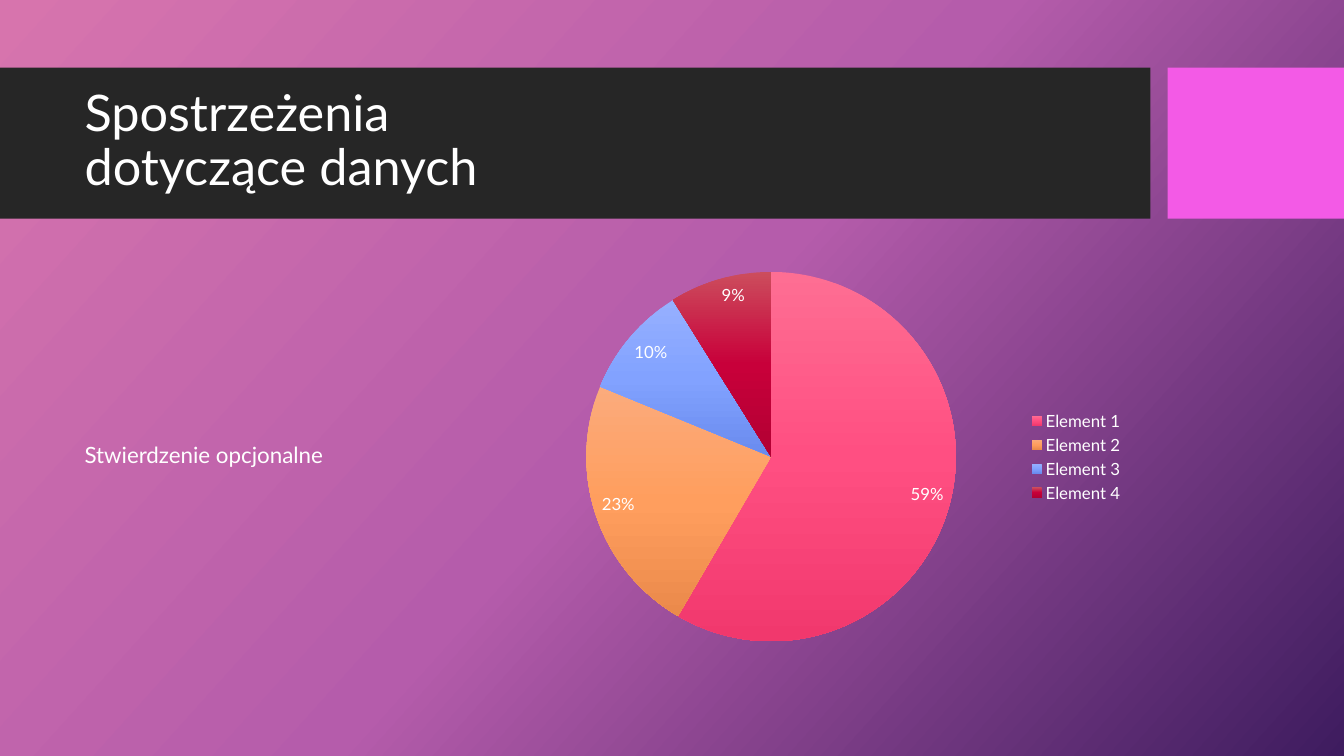
from copy import deepcopy

from pptx import Presentation
from pptx.chart.data import CategoryChartData
from pptx.dml.color import RGBColor
from pptx.enum import chart as charts, shapes, text
from pptx.util import Inches, Pt

FONT = "Lato"
WHITE = "FFFFFF"
MARGIN = 0.74
BODY_TOP, BODY_HEIGHT = 2.56, 3.94
SLICES = [
    ("Element 1", 59, ("FE6E93", "FF4F82", "F1386D")),
    ("Element 2", 23, ("FBAB7C", "FF9E5E", "EB8A4B")),
    ("Element 3", 10, ("96B0FF", "82A2FF", "698BEE")),
    ("Element 4", 9, ("CC4D5D", "C8003A", "B20033")),
]


def color(value):
    return RGBColor.from_string(value)


def style_font(font, size):
    font.name, font.size = FONT, Pt(size)
    font.color.rgb = color(WHITE)


def fill_gradient(fill, colors, clockwise):
    """Blend three evenly spaced colours at a clockwise angle in degrees."""
    fill.gradient()
    fill.gradient_angle = 360 - clockwise
    first = fill.gradient_stops[0]._gs
    first.addnext(deepcopy(first))
    for stop, value, position in zip(fill.gradient_stops, colors, (0, 0.5, 1)):
        stop.color.rgb = color(value)
        stop.position = position


def add_band(page, left, top, width, height, value):
    band = page.shapes.add_shape(
        shapes.MSO_SHAPE.RECTANGLE, *map(Inches, (left, top, width, height)))
    band.shadow.inherit = False
    band.fill.solid()
    band.fill.fore_color.rgb = color(value)
    band.line.fill.background()


def add_text(page, left, top, width, height, lines, size):
    box = page.shapes.add_textbox(*map(Inches, (left, top, width, height)))
    frame = box.text_frame
    frame.word_wrap = True
    frame.vertical_anchor = text.MSO_ANCHOR.MIDDLE
    para = frame.paragraphs[0]
    para.line_spacing = 0.9
    for index, line in enumerate(lines):
        if index:
            para.add_line_break()
        span = para.add_run()
        span.text = line
        style_font(span.font, size)


def add_header(page, top, height):
    add_band(page, 0, top, 11.41, height, "262626")
    add_band(page, 11.58, top, 1.75, height, "F35AE6")
    add_text(page, MARGIN, top + 0.15, 10.51, 1.18,
             ["Spostrzeżenia", "dotyczące danych"], 36)


def add_pie(page, left, top, width, height):
    data = CategoryChartData()
    data.categories = [name for name, _, _ in SLICES]
    data.add_series("Series 1", [share for _, share, _ in SLICES])
    pie = page.shapes.add_chart(
        charts.XL_CHART_TYPE.PIE, *map(Inches, (left, top, width, height)), data).chart
    style_font(pie.font, 10)
    pie.has_title = False
    pie.has_legend = True
    pie.legend.position = charts.XL_LEGEND_POSITION.RIGHT
    pie.legend.include_in_layout = False
    style_font(pie.legend.font, 12)

    plot = pie.plots[0]
    plot.vary_by_categories = True
    for index, (_, _, colors) in enumerate(SLICES):
        look = plot.series[0].points[index].format
        fill_gradient(look.fill, colors, 90)
        look.line.fill.background()

    labels = plot.series[0].data_labels
    labels.show_value = True
    labels.number_format = '0"%"'
    labels.number_format_is_linked = False
    labels.position = charts.XL_LABEL_POSITION.INSIDE_END
    style_font(labels.font, 12)


def main():
    deck = Presentation()
    deck.slide_width, deck.slide_height = Inches(13.33), Inches(7.5)
    page = deck.slides.add_slide(deck.slide_layouts[6])
    fill_gradient(page.background.fill, ("D774AD", "B55CAB", "3E1C5F"), 42)
    add_header(page, 0.67, 1.5)
    add_pie(page, 5.12, BODY_TOP, 6.13, BODY_HEIGHT)
    add_text(page, MARGIN, BODY_TOP, 4.14, BODY_HEIGHT, ["Stwierdzenie opcjonalne"], 16)
    deck.save("out.pptx")


if __name__ == "__main__":
    main()
